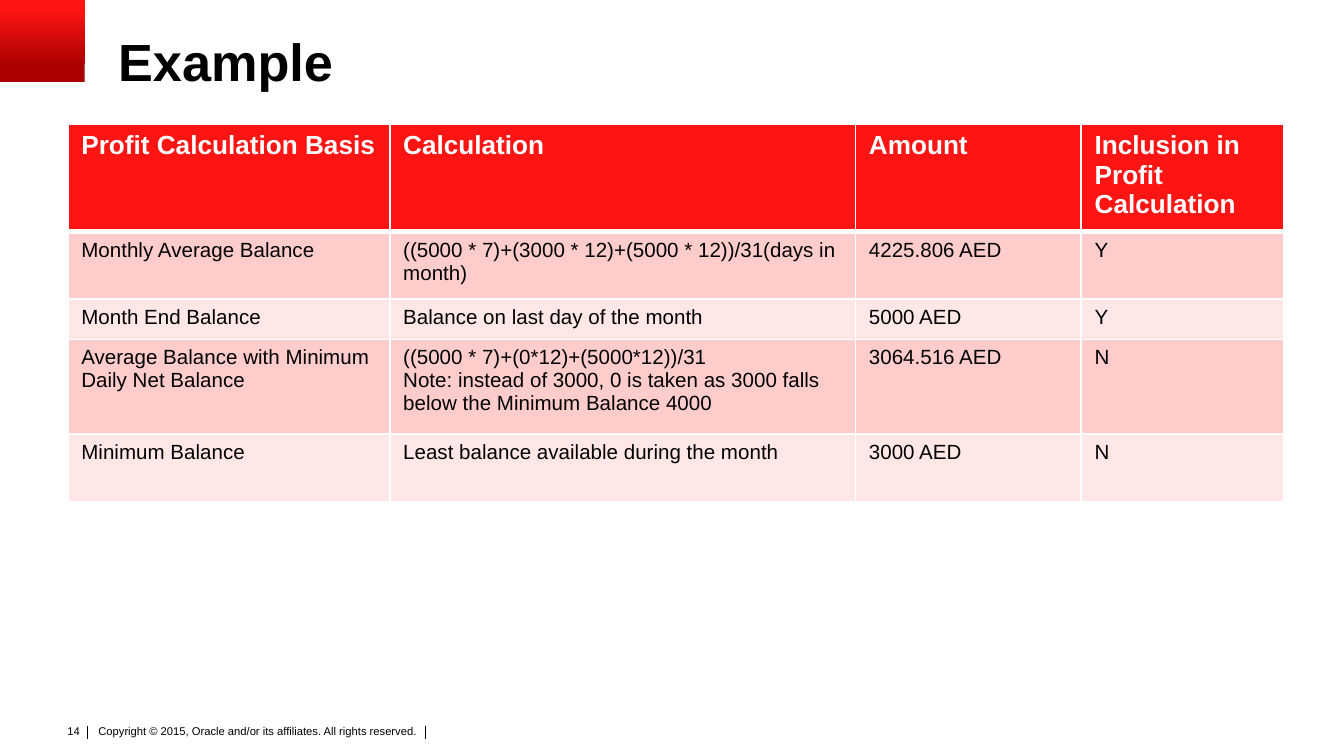
from collections import namedtuple

from lxml import etree
from pptx import Presentation
from pptx import util as u
from pptx.dml.color import RGBColor
from pptx.enum import shapes, text
from pptx.oxml.ns import qn

CELL = 0.1  # side of one grid cell, in inches
COLUMNS, ROWS = 100, 56.25
FONT = "Arial"
COLOURS = {
    "ink": "000000",
    "paper": "FFFFFF",
    "red": "FF1414",
    "dark red": "AA0000",
    "odd row": "FFCCCC",
    "even row": "FFE7E7",
}
HEADINGS = ["Profit Calculation Basis", "Calculation", "Amount",
            "Inclusion in Profit Calculation"]
BALANCES = [
    ["Monthly Average Balance",
     "((5000 * 7)+(3000 * 12)+(5000 * 12))/31(days in month)",
     "4225.806 AED", "Y"],
    ["Month End Balance", "Balance on last day of the month",
     "5000 AED", "Y"],
    ["Average Balance with Minimum Daily Net Balance",
     "((5000 * 7)+(0*12)+(5000*12))/31\n"
     "Note: instead of 3000, 0 is taken as 3000 falls below the Minimum Balance 4000",
     "3064.516 AED", "N"],
    ["Minimum Balance", "Least balance available during the month",
     "3000 AED", "N"],
]
BASIS_COLUMNS = [23.95, 34.65, 16.8, 15.05]
BASIS_ROWS = [8, 5, 3, 7.05, 5]

Box = namedtuple("Box", "left top width height")


def grid(cells):
    return u.Inches(cells * CELL)


def within(box, left, top, width, height):
    """Box placed relative to the corner of another one."""
    return Box(box.left + left, box.top + top, width, height)


def colour(name):
    return RGBColor.from_string(COLOURS[name])


def write(frame, wording, size, ink="ink", bold=False):
    for number, line in enumerate(wording.split("\n")):
        paragraph = frame.add_paragraph() if number else frame.paragraphs[0]
        run = paragraph.add_run()
        run.text = line
        run.font.name = FONT
        run.font.size = u.Pt(size)
        run.font.bold = bold
        run.font.color.rgb = colour(ink)


def add_label(slide, box, wording, size, side=0, edge=0, wrap=True, bold=False):
    """Text box with the given side and top/bottom insets; returns its paragraph."""
    frame = slide.shapes.add_textbox(*map(grid, box)).text_frame
    frame.word_wrap = wrap
    frame.margin_left = frame.margin_right = grid(side)
    frame.margin_top = frame.margin_bottom = grid(edge)
    write(frame, wording, size, bold=bold)
    return frame.paragraphs[0]


def add_corner(slide, box):
    corner = slide.shapes.add_shape(shapes.MSO_SHAPE.RECTANGLE, *map(grid, box))
    corner.shadow.inherit = False
    corner.line.fill.background()
    corner.fill.gradient()
    corner.fill.gradient_angle = 90
    shades = [(0.2, "dark red"), (0.9, "red")]
    for stop, (position, shade) in zip(corner.fill.gradient_stops, shades):
        stop.position = position
        stop.color.rgb = colour(shade)


def add_title(slide, box):
    add_label(slide, box, "Example", 28, bold=True).line_spacing = 0.9


def add_borders(cell, bottom):
    properties = cell._tc.get_or_add_tcPr()
    widths = {"a:lnL": 1, "a:lnR": 1, "a:lnT": 1, "a:lnB": bottom}
    for place, (tag, width) in enumerate(widths.items()):
        border = etree.Element(qn(tag), w=str(u.Pt(width)))
        fill = etree.SubElement(border, qn("a:solidFill"))
        etree.SubElement(fill, qn("a:srgbClr"), val=COLOURS["paper"])
        properties.insert(place, border)


def add_balances(slide, box):
    contents = [HEADINGS] + BALANCES
    table = slide.shapes.add_table(
        len(contents), len(HEADINGS), *map(grid, box)).table
    for column, width in zip(table.columns, BASIS_COLUMNS):
        column.width = grid(width)
    for number, (row, height) in enumerate(zip(table.rows, BASIS_ROWS)):
        row.height = grid(height)
        heading = number == 0
        shade = "red" if heading else "odd row" if number % 2 else "even row"
        for cell, wording in zip(row.cells, contents[number]):
            cell.fill.solid()
            cell.fill.fore_color.rgb = colour(shade)
            add_borders(cell, bottom=3 if heading else 1)
            write(cell.text_frame, wording, 14 if heading else 11,
                  "paper" if heading else "ink", heading)


def add_divider(slide, box):
    x, top, bottom = map(grid, (box.left, box.top, box.top + box.height))
    divider = slide.shapes.add_connector(
        shapes.MSO_CONNECTOR.STRAIGHT, x, top, x, bottom)
    divider.line.color.rgb = colour("ink")
    divider.line.width = u.Pt(0.5)
    etree.SubElement(divider._element.spPr, qn("a:effectLst"))


def add_footer(slide, box):
    add_label(slide, within(box, 3, 0.3, 27.4, 2.4),
              "Copyright © 2015, Oracle and/or its affiliates. All rights reserved.",
              6, side=0.4, edge=0.2)
    for left in (2.6, 27.75):
        add_divider(slide, within(box, left, 0.6, 0, 1))
    page = add_label(slide, within(box, 0, 0, 3, 2), "14", 6,
                     side=1, edge=0.5, wrap=False)
    page.alignment = text.PP_ALIGN.RIGHT


def main():
    deck = Presentation()
    deck.slide_width, deck.slide_height = grid(COLUMNS), grid(ROWS)
    slide = deck.slides.add_slide(deck.slide_layouts[6])
    add_footer(slide, Box(3.92, 53.4, 30.4, 2.7))
    add_corner(slide, Box(0, 0, 6.3, 6.1))
    add_title(slide, Box(8.8, 2.7, 90, 8.4))
    add_balances(slide, Box(5.05, 9.25, sum(BASIS_COLUMNS), sum(BASIS_ROWS)))
    deck.save("out.pptx")


if __name__ == "__main__":
    main()
